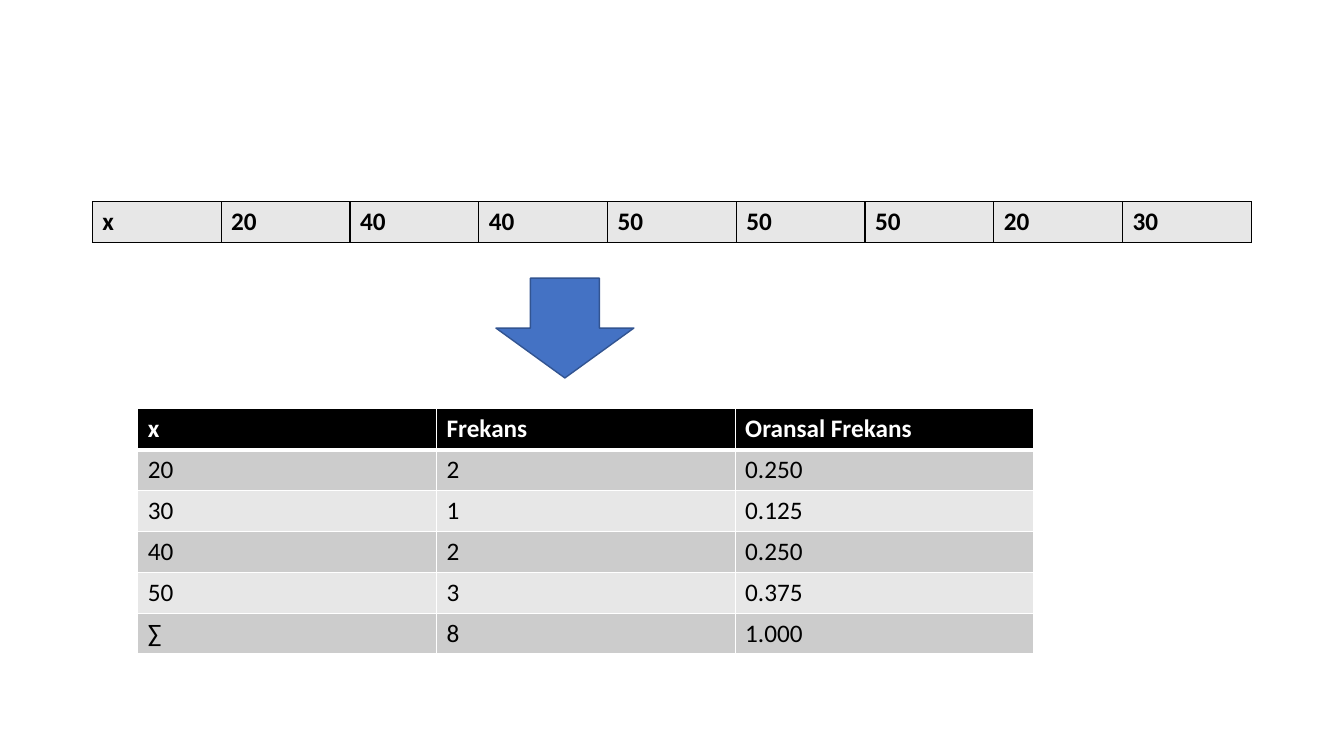
import pptx
import pptx.dml.color
import pptx.enum.shapes
import pptx.oxml
import pptx.oxml.ns
import pptx.util

Pt = pptx.util.Pt
COLORS = {
    "black": "000000",
    "white": "FFFFFF",
    "light": "E7E7E7",
    "gray": "CCCCCC",
    "blue": "4472C4",
    "navy": "325491",
}
DATA = ["x", "20", "40", "40", "50", "50", "50", "20", "30"]
FREQ = [
    ["x", "Frekans", "Oransal Frekans"],
    ["20", "2", "0.250"],
    ["30", "1", "0.125"],
    ["40", "2", "0.250"],
    ["50", "3", "0.375"],
    ["∑", "8", "1.000"],
]


class Board:
    """Draws styled tables and shapes on one slide."""

    font = "Calibri"
    size = 18
    row = 29.2

    def __init__(self, deck):
        self.slide = deck.slides.add_slide(deck.slide_layouts[6])

    def color(self, name):
        return pptx.dml.color.RGBColor.from_string(COLORS[name])

    def border(self, cell, name, widths):
        props = cell._tc.get_or_add_tcPr()
        space = pptx.oxml.ns.nsdecls("a")
        for spot, (side, width) in enumerate(zip("LRTB", widths)):
            line = pptx.oxml.parse_xml(
                f'<a:ln{side} {space} w="{Pt(width)}"><a:solidFill>'
                f'<a:srgbClr val="{COLORS[name]}"/></a:solidFill></a:ln{side}>'
            )
            props.insert(spot, line)

    def cell(self, cell, text, fill, ink, bold):
        cell.fill.solid()
        cell.fill.fore_color.rgb = self.color(fill)
        cell.text_frame.text = text
        font = cell.text_frame.paragraphs[0].runs[0].font
        font.name, font.size, font.bold = self.font, Pt(self.size), bold
        font.color.rgb = self.color(ink)

    def table(self, left, top, width, rows, fills, edge, head):
        count = len(rows[0])
        table = self.slide.shapes.add_table(
            len(rows), count, Pt(left), Pt(top), Pt(width), Pt(self.row * len(rows))
        ).table
        for col in table.columns:
            col.width = Pt(width / count)
        for i, texts in enumerate(rows):
            table.rows[i].height = Pt(self.row)
            upper = 3 if i == 1 else 1
            lower = 3 if i == 0 and len(rows) > 1 else 1
            for j, text in enumerate(texts):
                cell = table.cell(i, j)
                ink = head if i == 0 else "black"
                self.cell(cell, text, fills[i], ink, i == 0)
                self.border(cell, edge, (1, 1, upper, lower))

    def arrow(self, left, top, width, height):
        kind = pptx.enum.shapes.MSO_SHAPE.DOWN_ARROW
        shape = self.slide.shapes.add_shape(
            kind, Pt(left), Pt(top), Pt(width), Pt(height)
        )
        shape.shadow.inherit = False
        shape.fill.solid()
        shape.fill.fore_color.rgb = self.color("blue")
        shape.line.color.rgb = self.color("navy")
        shape.line.width = Pt(1)


def main():
    deck = pptx.Presentation()
    deck.slide_width, deck.slide_height = Pt(960), Pt(540)
    board = Board(deck)
    board.table(66, 144, 828, [DATA], ["light"], "black", "black")
    fills = ["black"] + ["gray", "light"] * 2 + ["gray"]
    board.table(98.5, 292, 640, FREQ, fills, "white", "white")
    board.arrow(354.25, 198.75, 98.5, 71.25)
    deck.save("out.pptx")


if __name__ == "__main__":
    main()
